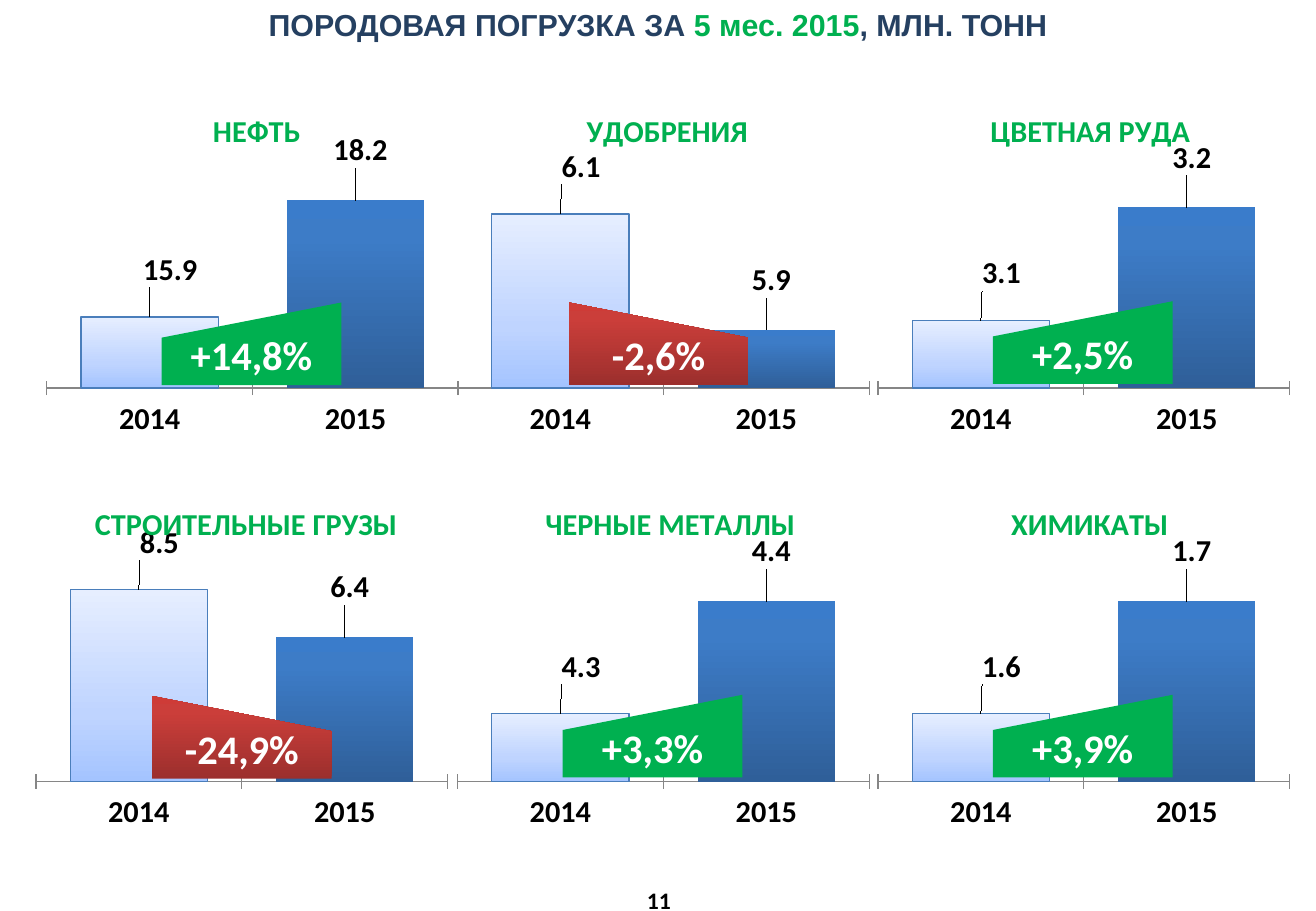
from copy import deepcopy
from dataclasses import dataclass

from lxml.etree import SubElement
from pptx import Presentation
from pptx.chart.data import CategoryChartData
from pptx.dml.color import RGBColor
from pptx.enum.chart import XL_CHART_TYPE as ChartType
from pptx.enum.chart import XL_LABEL_POSITION as LabelPosition
from pptx.enum.chart import XL_TICK_MARK as TickMark
from pptx.enum.text import MSO_ANCHOR as Anchor
from pptx.enum.text import PP_ALIGN as Align
from pptx.oxml.ns import qn
from pptx.util import Pt

PX = 9144  # EMU: 100 px to the inch


@dataclass(frozen=True)
class Theme:
    heading_font: str = "Arial"
    body_font: str = "Calibri"
    text_size: int = 18
    badge_size: int = 24
    page_size: int = 14
    black: str = "000000"
    white: str = "FFFFFF"
    navy: str = "254061"
    green: str = "00B050"
    axis: str = "868686"
    bar_line: str = "4A7EBB"
    light_bar: tuple = ((0, "A4C4FF"), (0.35, "BFD4FF"), (1, "E6EEFF"))
    dark_bar: tuple = ((0, "2F5F99"), (0.8, "3D7CC7"), (1, "3A7CCB"))
    fall: tuple = ((0, "9C2F2D"), (0.8, "CB3E3A"), (1, "CE3B37"))


THEME = Theme()
CHART_SIZE = (340, 308)
BADGE_WIDTH, BADGE_HEIGHT, BADGE_SLOPE = 148, 68, 29
LABEL_SHIFTS = ((0.05, -0.065), (0.012, -0.072))


@dataclass(frozen=True)
class Panel:
    title: str
    chart_at: tuple
    title_x: float
    values: tuple
    scale: tuple
    change: str
    badge_at: tuple


PANELS = (
    Panel("НЕФТЬ", (38, 67), 0.39, (15.9, 18.2), (14.5, 18.5), "+14,8%", (133, 249)),
    Panel("УДОБРЕНИЯ", (376, 67), 0.3, (6.1, 5.9), (5.8, 6.15), "-2,6%", (468, 249)),
    Panel("ЦВЕТНАЯ РУДА", (722, 67), 0.26, (3.1, 3.2), (3.04, 3.22), "+2,5%", (817, 248)),
    Panel("СТРОИТЕЛЬНЫЕ ГРУЗЫ", (29, 391), 0.13, (8.5, 6.4), (0, 9), "-24,9%", (125, 573)),
    Panel("ЧЕРНЫЕ МЕТАЛЛЫ", (376, 391), 0.2, (4.3, 4.4), (4.24, 4.42), "+3,3%", (463, 572)),
    Panel("ХИМИКАТЫ", (722, 391), 0.31, (1.6, 1.7), (1.54, 1.72), "+3,9%", (817, 572)),
)


def style_font(font, size, color, name=THEME.body_font):
    font.name, font.size, font.bold = name, Pt(size), True
    font.color.rgb = RGBColor.from_string(color)


def fill_gradient(fill, stops):
    """Fill from bottom to top with three (position, colour) stops."""
    fill.gradient()
    fill.gradient_angle = 90
    first = fill.gradient_stops[0]._gs
    first.addnext(deepcopy(first))
    for stop, (position, color) in zip(fill.gradient_stops, stops):
        stop.position = position
        stop.color.rgb = RGBColor.from_string(color)


def set_layout(parent, index, **settings):
    """Give a chart part a manual layout, added at index if it has none."""
    layout = parent.find(qn("c:layout"))
    if layout is None:
        layout = SubElement(parent, qn("c:layout"))
        parent.insert(index, layout)
    manual = SubElement(layout, qn("c:manualLayout"))
    for tag, value in settings.items():
        SubElement(manual, qn(f"c:{tag}")).set("val", str(value))


def add_text(slide, box, runs, size, font_name, align, anchor=Anchor.TOP):
    frame = slide.shapes.add_textbox(*(length * PX for length in box)).text_frame
    frame.word_wrap = True
    frame.vertical_anchor = anchor
    paragraph = frame.paragraphs[0]
    paragraph.alignment = align
    for text, color in runs:
        run = paragraph.add_run()
        run.text = text
        style_font(run.font, size, color, font_name)


def style_axes(chart, scale):
    categories, values = chart.category_axis, chart.value_axis
    categories.major_tick_mark = TickMark.CROSS
    categories.format.line.color.rgb = RGBColor.from_string(THEME.axis)
    categories.tick_labels.font.bold = True
    values.visible = False
    values.has_major_gridlines = False
    values.minimum_scale, values.maximum_scale = scale


def style_bars(plot):
    plot.gap_width = 50
    plot.vary_by_categories = False
    series = plot.series[0]
    for index, stops in enumerate((THEME.light_bar, THEME.dark_bar)):
        point = series.points[index]
        fill_gradient(point.format.fill, stops)
        label = point.data_label
        style_font(label.font, THEME.text_size, THEME.black)
        label.position = LabelPosition.OUTSIDE_END
    light_line = series.points[0].format.line
    light_line.color.rgb = RGBColor.from_string(THEME.bar_line)
    light_line.width = Pt(0.75)
    series.points[1].format.line.fill.background()
    for label, (x, y) in zip(series._element.iter(qn("c:dLbl")), LABEL_SHIFTS):
        set_layout(label, 1, x=x, y=y)


def add_bar_chart(slide, panel):
    data = CategoryChartData(number_format="0.0")
    data.categories = ("2014", "2015")
    data.add_series("Series 1", panel.values)
    box = (length * PX for length in panel.chart_at + CHART_SIZE)
    chart = slide.shapes.add_chart(ChartType.COLUMN_CLUSTERED, *box, data).chart
    chart.has_legend = False
    chart.font.name, chart.font.size = THEME.body_font, Pt(THEME.text_size)
    chart.font.color.rgb = RGBColor.from_string(THEME.black)
    title = chart.chart_title
    run = title.text_frame.paragraphs[0].add_run()
    run.text = panel.title
    style_font(run.font, THEME.text_size, THEME.green)
    set_layout(title._element, 1, xMode="edge", yMode="edge", x=panel.title_x, y=0.06)
    style_axes(chart, panel.scale)
    style_bars(chart.plots[0])
    plot_area = chart._chartSpace.find(f".//{qn('c:plotArea')}")
    set_layout(plot_area, 0, layoutTarget="inner", xMode="edge", yMode="edge",
               x=0, y=0.277, w=1, h=0.543)


def add_change_badge(slide, panel):
    """Draw a block whose top edge slopes the way the value moved."""
    left, top = panel.badge_at
    right, bottom = left + BADGE_WIDTH, top + BADGE_HEIGHT
    rises = panel.change.startswith("+")
    left_top = top + BADGE_SLOPE * rises
    right_top = top + BADGE_SLOPE * (not rises)
    builder = slide.shapes.build_freeform(left, left_top, scale=PX)
    builder.add_line_segments([(right, right_top), (right, bottom), (left, bottom)])
    badge = builder.convert_to_shape()
    badge.shadow.inherit = False
    badge.line.fill.background()
    if rises:
        badge.fill.solid()
        badge.fill.fore_color.rgb = RGBColor.from_string(THEME.green)
    else:
        fill_gradient(badge.fill, THEME.fall)
    frame = badge.text_frame
    frame.vertical_anchor = Anchor.BOTTOM
    paragraph = frame.paragraphs[0]
    paragraph.text = panel.change
    paragraph.alignment = Align.CENTER
    style_font(paragraph.font, THEME.badge_size, THEME.white)


def main():
    presentation = Presentation()
    presentation.slide_width, presentation.slide_height = 1083 * PX, 750 * PX
    slide = presentation.slides.add_slide(presentation.slide_layouts[6])
    heading = (("ПОРОДОВАЯ ПОГРУЗКА ЗА ", THEME.navy), ("5 мес. 2015", THEME.green),
               (", МЛН. ТОНН", THEME.navy))
    add_text(slide, (148, 0, 787, 40), heading, THEME.text_size,
             THEME.heading_font, Align.CENTER)
    for panel in PANELS:
        add_bar_chart(slide, panel)
        add_change_badge(slide, panel)
    add_text(slide, (507, 721, 55, 40), (("11", THEME.black),), THEME.page_size,
             THEME.body_font, Align.RIGHT, Anchor.MIDDLE)
    presentation.save("out.pptx")


if __name__ == "__main__":
    main()
